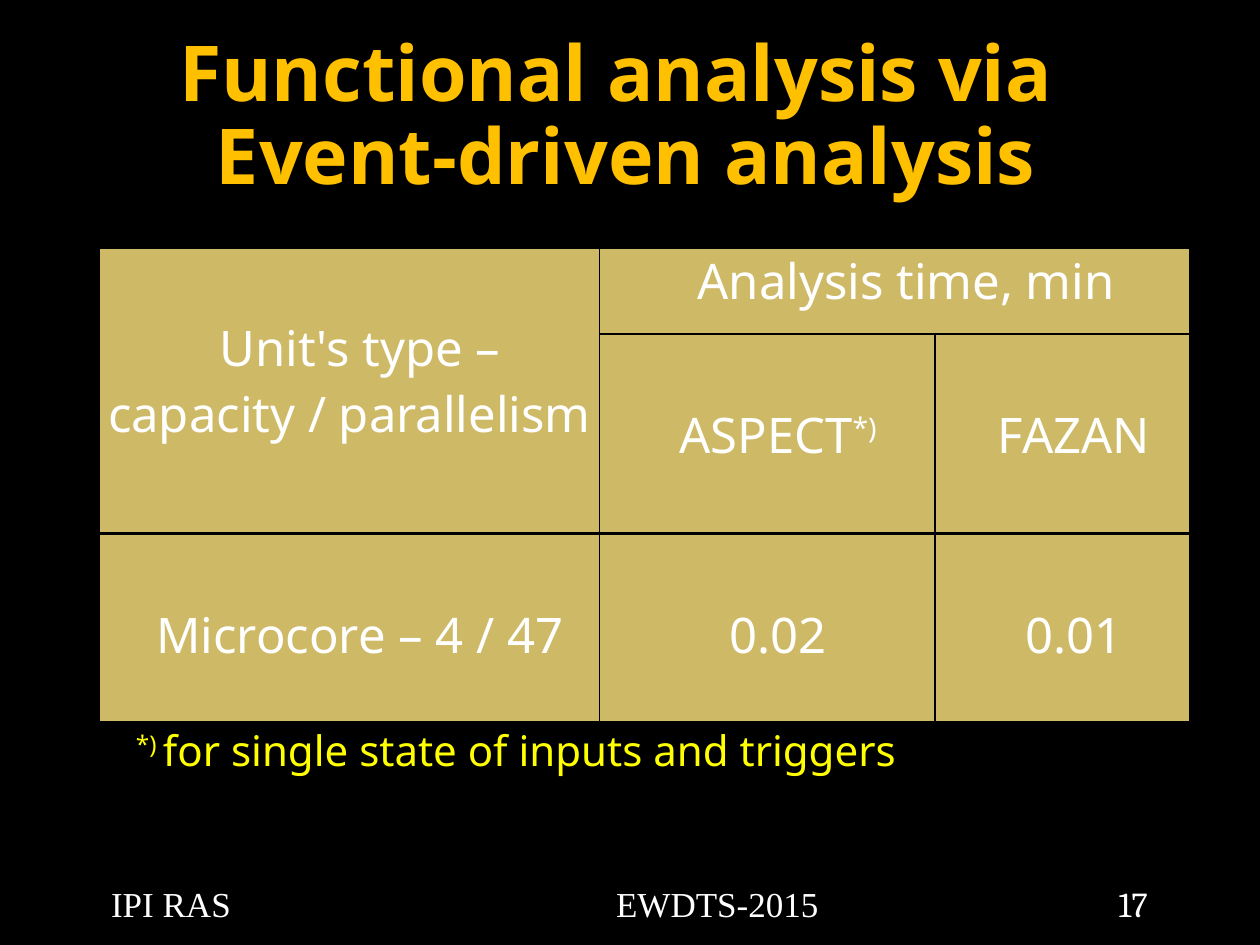
from pptx import Presentation
from pptx import oxml
from pptx.dml.color import RGBColor
from pptx.enum import text
from pptx.oxml import ns
from pptx.util import Cm, Pt

BLACK = RGBColor(0x00, 0x00, 0x00)
WHITE = RGBColor(0xFF, 0xFF, 0xFF)
AMBER = RGBColor(0xFF, 0xC0, 0x00)
YELLOW = RGBColor(0xFF, 0xFF, 0x00)
SAND = RGBColor(0xCE, 0xB9, 0x66)

SANS = "Noto Sans"
SERIF = "Times New Roman"
NO_STYLE = "{2D5ABB26-0587-4C30-8999-92F81FD0307C}"
THIN, THICK = 1, 2.25

COLUMN_WIDTHS = (10.1, 6.76, 5.16)
ROW_HEIGHTS = (1.75, 4.03, 3.78)
LINE_HEIGHT = Cm(1.35)

# row, column, row span, column span, runs as (text, is superscript)
CELLS = (
    (0, 0, 2, 1, [("Unit's type – capacity / parallelism", False)]),
    (0, 1, 1, 2, [("Analysis time, min", False)]),
    (1, 1, 1, 1, [("ASPECT", False), ("*)", True)]),
    (1, 2, 1, 1, [("FAZAN", False)]),
    (2, 0, 1, 1, [("Microcore – 4 / 47", False)]),
    (2, 1, 1, 1, [("0.02", False)]),
    (2, 2, 1, 1, [("0.01", False)]),
)


def add_run(paragraph, content, size, color, font=SANS, superscript=False, bold=False):
    run = paragraph.add_run()
    run.text = content
    run.font.size = Pt(size)
    run.font.name = font
    run.font.color.rgb = color
    run.font.bold = bold
    if superscript:
        run.font._element.set("baseline", "30000")


def add_title(slide):
    title = slide.shapes.title
    title.left, title.top, title.width, title.height = Cm(1.19), 0, Cm(22.86), Cm(4.75)
    title.text_frame.vertical_anchor = text.MSO_ANCHOR.MIDDLE
    paragraph = title.text_frame.paragraphs[0]
    paragraph.alignment = text.PP_ALIGN.CENTER
    paragraph.line_spacing = 0.9
    add_run(paragraph, "Functional analysis via ", 44, AMBER, bold=True)
    paragraph.add_line_break()
    add_run(paragraph, "Event-driven analysis", 44, AMBER, bold=True)


def set_borders(cell, widths):
    """Draw black cell edges; widths are points for left, right, top, bottom."""
    properties = cell._tc.get_or_add_tcPr()
    for side, width in zip("LRTB", widths):
        properties.append(oxml.parse_xml(
            f'<a:ln{side} {ns.nsdecls("a")} w="{Pt(width)}"><a:solidFill>'
            f'<a:srgbClr val="{BLACK}"/></a:solidFill></a:ln{side}>'))


def fill_cell(cell, runs, top_margin):
    cell.fill.solid()
    cell.fill.fore_color.rgb = SAND
    cell.margin_left = cell.margin_right = Cm(0.05)
    cell.margin_top, cell.margin_bottom = top_margin, 0
    cell.vertical_anchor = text.MSO_ANCHOR.TOP
    paragraph = cell.text_frame.paragraphs[0]
    paragraph.alignment = text.PP_ALIGN.CENTER
    paragraph._p.get_or_add_pPr().set("indent", str(Cm(0.43)))
    for content, superscript in runs:
        add_run(paragraph, content, 28, WHITE, superscript=superscript)


def add_timing_table(slide):
    frame = slide.shapes.add_table(
        len(ROW_HEIGHTS), len(COLUMN_WIDTHS), Cm(1.99), Cm(4.98),
        Cm(sum(COLUMN_WIDTHS)), Cm(sum(ROW_HEIGHTS)))
    table = frame.table
    table.first_row = table.horz_banding = False
    table._tbl.tblPr.find(ns.qn("a:tableStyleId")).text = NO_STYLE
    for column, width in zip(table.columns, COLUMN_WIDTHS):
        column.width = Cm(width)
    for row, height in zip(table.rows, ROW_HEIGHTS):
        row.height = Cm(height)

    for row, column, row_span, column_span, runs in CELLS:
        cell = table.cell(row, column)
        last_row, last_column = row + row_span, column + column_span
        if row_span * column_span > 1:
            cell.merge(table.cell(last_row - 1, last_column - 1))
        set_borders(cell, (
            THICK if column == 0 else THIN,
            THICK if last_column == len(COLUMN_WIDTHS) else THIN,
            THIN if row == 1 else THICK,
            THICK if last_row == 2 else THIN))
        spans_columns = column_span > 1
        fill_cell(cell, runs, 0 if spans_columns else LINE_HEIGHT)


def add_text_box(slide, left, top, width, height, left_margin):
    """Add a wrapping text box and return its first paragraph."""
    shape = slide.shapes.add_textbox(Cm(left), Cm(top), Cm(width), Cm(height))
    shape.text_frame.word_wrap = True
    shape.text_frame.margin_left = Cm(left_margin)
    return shape.text_frame.paragraphs[0]


def add_footnote(slide):
    paragraph = add_text_box(slide, 1.98, 14.48, 20.04, 1.3, 0.76)
    add_run(paragraph, "*) ", 24, YELLOW, superscript=True)
    add_run(paragraph, "for single state of inputs and triggers", 24, YELLOW)


def add_footer(slide):
    paragraph = add_text_box(slide, 0.79, 16.87, 23.83, 2.18, 1.45)
    paragraph._p.get_or_add_pPr().append(oxml.parse_xml(
        f'<a:tabLst {ns.nsdecls("a")}><a:tab pos="{Cm(10.18)}" algn="l"/>'
        f'<a:tab pos="{Cm(20.9)}" algn="r"/></a:tabLst>'))
    add_run(paragraph, "IPI RAS\tEWDTS-2015", 20, WHITE, SERIF)
    add_run(paragraph, "\t17", 20, WHITE, "Cambria")
    slide.shapes[-1].text_frame.margin_top = Cm(0.93)


def main():
    presentation = Presentation()
    presentation.slide_width, presentation.slide_height = Cm(25.4), Cm(19.05)
    slide = presentation.slides.add_slide(presentation.slide_layouts[5])
    slide.background.fill.solid()
    slide.background.fill.fore_color.rgb = BLACK
    add_title(slide)
    add_footer(slide)
    add_timing_table(slide)
    add_footnote(slide)
    presentation.save("out.pptx")


if __name__ == "__main__":
    main()
